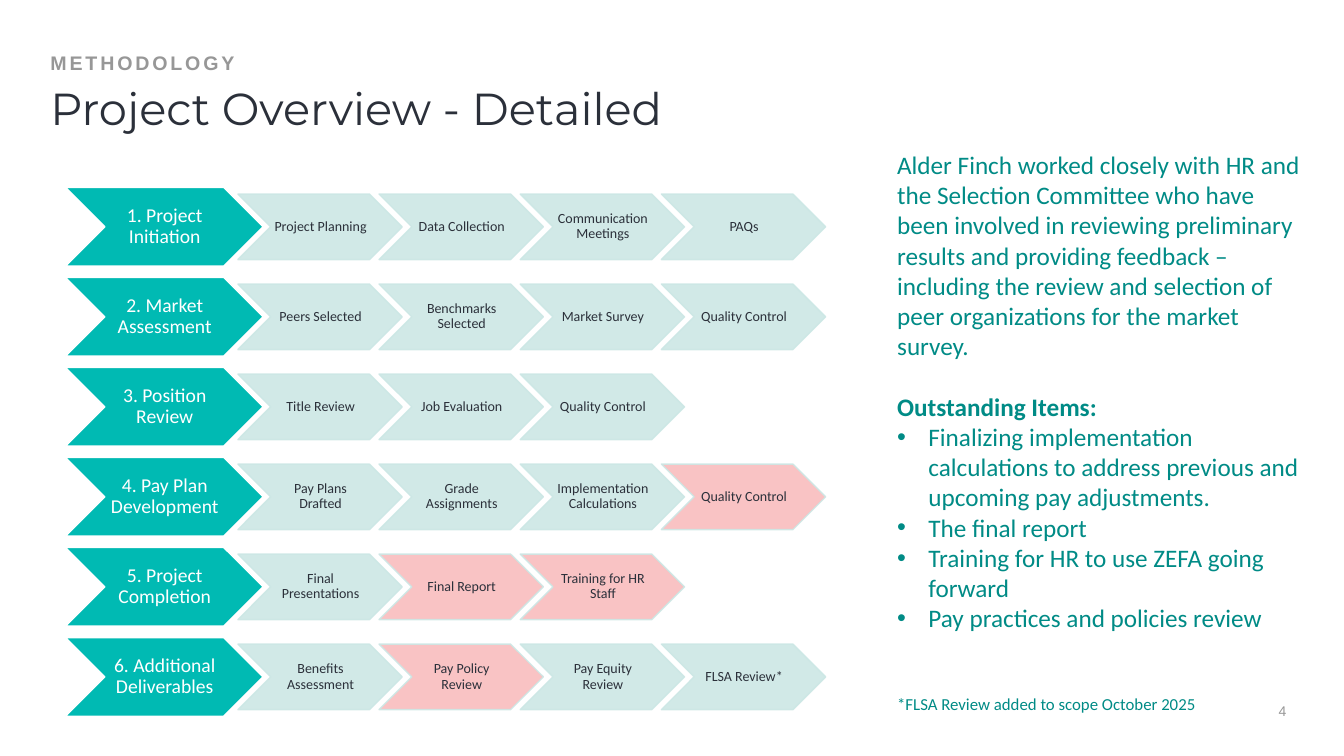
from lxml.etree import SubElement
from pptx import Presentation
from pptx.dml.color import RGBColor
from pptx.enum.shapes import MSO_SHAPE as Shape
from pptx.enum.text import MSO_ANCHOR as Anchor, MSO_AUTO_SIZE as AutoSize, PP_ALIGN as Align
from pptx.oxml.ns import qn
from pptx.util import Inches, Pt

TITLE = "Project Overview - Detailed"
SECTION = "METHODOLOGY"
PAGE = "4"
# phase, steps, steps still outstanding
PHASES = [
    ("1. Project Initiation",
     ["Project Planning", "Data Collection", "Communication Meetings", "PAQs"], []),
    ("2. Market Assessment",
     ["Peers Selected", "Benchmarks Selected", "Market Survey", "Quality Control"], []),
    ("3. Position Review",
     ["Title Review", "Job Evaluation", "Quality Control"], []),
    ("4. Pay Plan Development",
     ["Pay Plans Drafted", "Grade Assignments", "Implementation Calculations",
      "Quality Control"], ["Quality Control"]),
    ("5. Project Completion",
     ["Final Presentations", "Final Report", "Training for HR Staff"],
     ["Final Report", "Training for HR Staff"]),
    ("6. Additional Deliverables",
     ["Benefits Assessment", "Pay Policy Review", "Pay Equity Review", "FLSA Review*"],
     ["Pay Policy Review"]),
]
SUMMARY = ("Alder Finch worked closely with HR and the Selection Committee who have been "
           "involved in reviewing preliminary results and providing feedback – including the "
           "review and selection of peer organizations for the market survey.")
OUTSTANDING_HEADING = "Outstanding Items:"
OUTSTANDING = [
    "Finalizing implementation calculations to address previous and upcoming pay adjustments.",
    "The final report",
    "Training for HR to use ZEFA going forward",
    "Pay practices and policies review",
]
FOOTNOTE = "*FLSA Review added to scope October 2025"

INK, GREY, WHITE = "2B303A", "979797", "FFFFFF"
TEAL, DEEP_TEAL, PALE_TEAL, PINK = "00BAB3", "008B86", "CCE7E5", "F9BDBE"

MARGIN, CONTENT_WIDTH = 0.5, 12.33
PHASE_LEFT, PHASE_TOP, PHASE_WIDTH, PHASE_HEIGHT = 0.65, 1.86, 1.96, 0.78
STEP_LEFT, STEP_WIDTH, STEP_HEIGHT = 2.36, 1.63, 0.65
ROW_PITCH, STEP_PITCH = 0.893, 1.4
BULLET_INDENT = 0.31
BODY_LINE = 21.6  # points


def rgb(hex_code):
    return RGBColor.from_string(hex_code)


def set_frame(frame, anchor=Anchor.TOP, insets=(0, 0, 0, 0)):
    frame.word_wrap = True
    frame.auto_size = AutoSize.NONE
    frame.vertical_anchor = anchor
    frame.margin_left, frame.margin_top, frame.margin_right, frame.margin_bottom = map(
        Inches, insets)


def write(frame, text, size=18, color=DEEP_TEAL, font="Calibri", bold=False, align=Align.LEFT,
          line=1.0, before=0, bullet=False, tracking=0):
    """Fill the frame's empty first paragraph, or append a new one."""
    first = frame.paragraphs[0]
    paragraph = frame.add_paragraph() if first.runs else first
    paragraph.alignment = align
    paragraph.line_spacing = line
    paragraph.space_before = Pt(before)
    if bullet:
        props = paragraph._p.get_or_add_pPr()
        props.set("marL", str(Inches(BULLET_INDENT)))
        props.set("indent", str(-Inches(BULLET_INDENT)))
        SubElement(props, qn("a:buFont")).set("typeface", "Arial")
        SubElement(props, qn("a:buChar")).set("char", "•")
    run = paragraph.add_run()
    run.text = text
    run.font.size, run.font.name, run.font.bold = Pt(size), font, bold
    run.font.color.rgb = rgb(color)
    if tracking:
        run.font._element.set("spc", str(tracking * 100))


def add_box(slide, left, top, width, height, **frame_format):
    box = slide.shapes.add_textbox(*map(Inches, (left, top, width, height)))
    set_frame(box.text_frame, **frame_format)
    return box.text_frame


def add_chevron(slide, text, left, top, width, height, fill, line, size, color, opacity=100):
    chevron = slide.shapes.add_shape(Shape.CHEVRON, *map(Inches, (left, top, width, height)))
    chevron.shadow.inherit = False
    chevron.fill.solid()
    chevron.fill.fore_color.rgb = rgb(fill)
    chevron.line.color.rgb = rgb(line)
    chevron.line.width = Pt(1)
    if opacity < 100:
        for tint in chevron._element.spPr.iter(qn("a:srgbClr")):
            SubElement(tint, qn("a:alpha")).set("val", str(opacity * 1000))
    set_frame(chevron.text_frame, Anchor.MIDDLE, (0.01, 0.01, 0, 0.01))
    write(chevron.text_frame, text, size=size, color=color, align=Align.CENTER, line=0.9)


def add_phases(slide):
    for row, (phase, steps, outstanding) in enumerate(PHASES):
        top = PHASE_TOP + row * ROW_PITCH
        add_chevron(slide, phase, PHASE_LEFT, top, PHASE_WIDTH, PHASE_HEIGHT,
                    TEAL, WHITE, 14, WHITE)
        step_top = top + (PHASE_HEIGHT - STEP_HEIGHT) / 2
        for column, step in enumerate(steps):
            add_chevron(slide, step, STEP_LEFT + column * STEP_PITCH, step_top,
                        STEP_WIDTH, STEP_HEIGHT, PINK if step in outstanding else PALE_TEAL,
                        PALE_TEAL, 10, INK, opacity=90)


def add_summary(slide):
    summary = add_box(slide, 8.8, 1.43, 4.26, 5.79, insets=(0.1, 0.05, 0.1, 0.05))
    write(summary, SUMMARY)
    write(summary, OUTSTANDING_HEADING, bold=True, before=BODY_LINE)
    for item in OUTSTANDING:
        write(summary, item, bullet=True)
    write(summary, FOOTNOTE, size=12, before=2 * BODY_LINE)


def main():
    deck = Presentation()
    deck.slide_width, deck.slide_height = Inches(13.33), Inches(7.5)
    slide = deck.slides.add_slide(deck.slide_layouts[5])

    title = slide.shapes.title
    title.left, title.top, title.width, title.height = map(
        Inches, (MARGIN, 0.76, CONTENT_WIDTH, 0.59))
    set_frame(title.text_frame, insets=(0, 0.1, 0, 0))
    write(title.text_frame, TITLE, size=32, color=INK, font="Montserrat", line=0.9)

    section = add_box(slide, MARGIN, 0.53, CONTENT_WIDTH, 0.21, anchor=Anchor.BOTTOM)
    write(section, SECTION, size=14, color=GREY, font="Arial", bold=True, line=0.9, tracking=2)

    add_phases(slide)
    add_summary(slide)

    page = add_box(slide, 12.52, 6.97, 0.4, 0.17, anchor=Anchor.MIDDLE)
    write(page, PAGE, size=10, color=GREY, font="Arial", align=Align.CENTER)
    deck.save("out.pptx")


if __name__ == "__main__":
    main()
